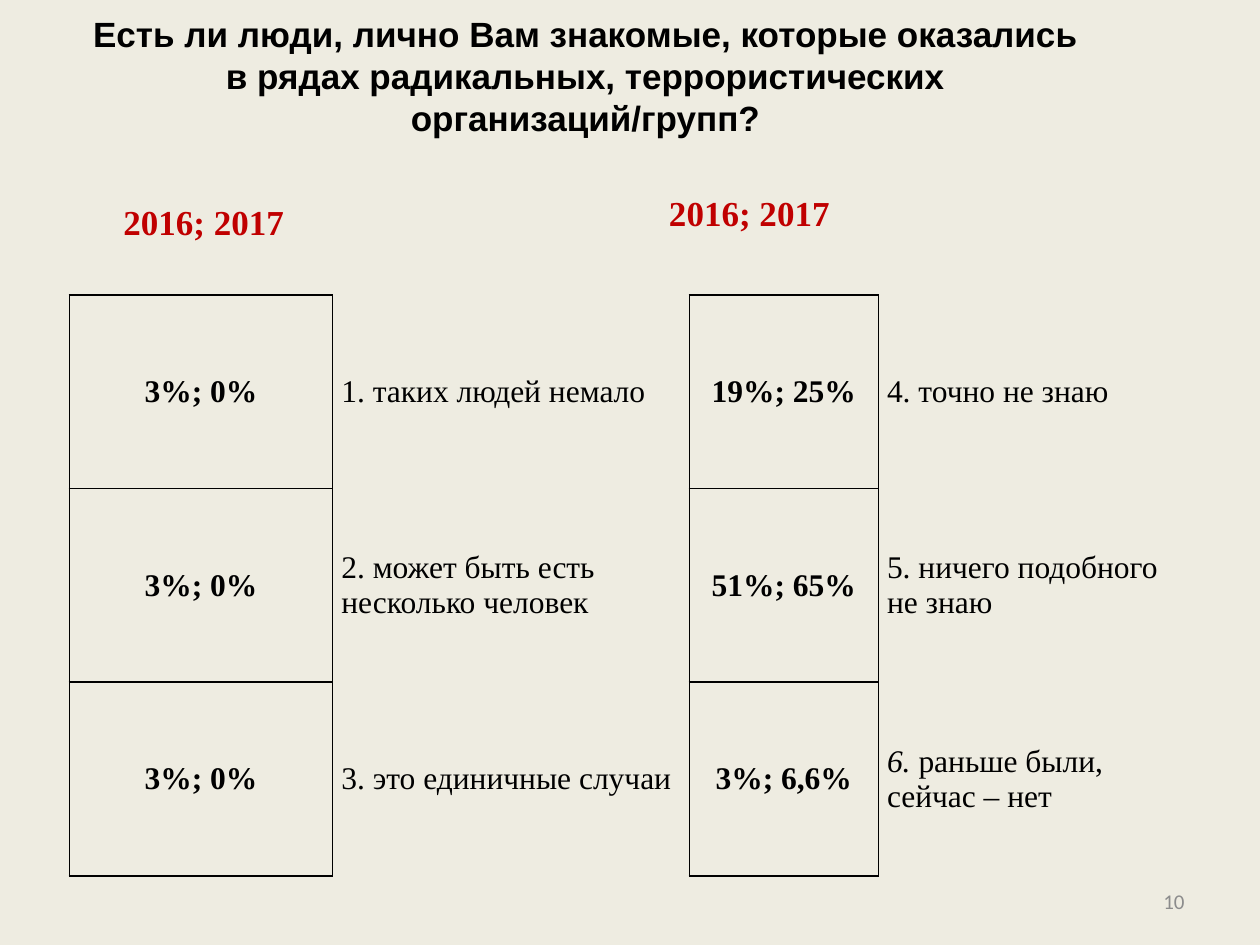
from dataclasses import dataclass
from typing import Any

from lxml.etree import SubElement
from pptx import Presentation
from pptx.dml.color import RGBColor
from pptx.enum.text import MSO_ANCHOR as Anchor, PP_ALIGN as Align
from pptx.oxml.ns import qn
from pptx.util import Pt

BLACK = RGBColor(0x00, 0x00, 0x00)
RED = RGBColor(0xC0, 0x00, 0x00)
GRAY = RGBColor(0x8C, 0x8C, 0x8C)
CREAM = RGBColor(0xEE, 0xEC, 0xE1)

SERIF = "Times New Roman"
PLAIN_STYLE = "{2D5ABB26-0587-4C30-8999-92F81FD0307C}"
CELL_FORMAT = {"margin_left": Pt(5), "margin_right": Pt(5), "margin_top": 0, "margin_bottom": 0}


@dataclass(frozen=True)
class Box:
    left: float
    top: float
    width: float
    height: float

    def lengths(self) -> tuple:
        return Pt(self.left), Pt(self.top), Pt(self.width), Pt(self.height)


@dataclass(frozen=True)
class Style:
    size: float
    align: Align
    color: RGBColor = BLACK
    face: str = SERIF
    bold: bool = False


@dataclass(frozen=True)
class Answer:
    share: str
    number: str
    wording: str
    italic_number: bool = False


TITLE = Style(20, Align.CENTER, face="Arial", bold=True)
YEARS = Style(20, Align.JUSTIFY, RED, bold=True)
SHARE = Style(18, Align.CENTER, bold=True)
WORDING = Style(18, Align.LEFT)
PAGE = Style(12, Align.RIGHT, GRAY, "Calibri")

ANSWERS = [
    [Answer("3%; 0%", "1. ", "таких людей немало"), Answer("19%; 25%", "4. ", "точно не знаю")],
    [Answer("3%; 0%", "2. ", "может быть есть несколько человек"),
     Answer("51%; 65%", "5. ", "ничего подобного не знаю")],
    [Answer("3%; 0%", "3. ", "это единичные случаи"),
     Answer("3%; 6,6%", "6. ", "раньше были, сейчас – нет", True)],
]


def apply(target: Any, values: dict) -> None:
    for name, value in values.items():
        setattr(target, name, value)


def write(frame: Any, style: Style, *parts: str, italic_first: bool = False) -> None:
    paragraph = frame.paragraphs[0]
    paragraph.alignment = style.align
    for index, part in enumerate(parts):
        run = paragraph.add_run()
        run.text = part
        italic = italic_first and index == 0
        apply(run.font, {"size": Pt(style.size), "name": style.face, "bold": style.bold, "italic": italic})
        run.font.color.rgb = style.color


def add_text(slide: Any, box: Box, style: Style, text: str) -> None:
    frame = slide.shapes.add_textbox(*box.lengths()).text_frame
    apply(frame, {"word_wrap": True, "vertical_anchor": Anchor.MIDDLE})
    write(frame, style, text)


def add_plain_table(slide: Any, box: Box, rows: int, widths: list[float]) -> Any:
    table = slide.shapes.add_table(rows, len(widths), *box.lengths()).table
    apply(table, {"first_row": False, "horz_banding": False})
    table._tbl.tblPr.find(qn("a:tableStyleId")).text = PLAIN_STYLE
    for column, width in zip(table.columns, widths):
        column.width = Pt(width)
    return table


def format_cell(cell: Any, anchor: Anchor, sides: str = "") -> None:
    apply(cell, CELL_FORMAT | {"vertical_anchor": anchor})
    properties = cell._tc.get_or_add_tcPr()
    for side in sides:
        line = SubElement(properties, qn(f"a:ln{side}"), w=str(Pt(1)))
        fill = SubElement(line, qn("a:solidFill"))
        SubElement(fill, qn("a:srgbClr"), val=str(BLACK))
    cell.fill.background()


def add_years(slide: Any, left: float, top: float) -> None:
    cell = add_plain_table(slide, Box(left, top, 126.7, 29.5), 1, [126.7]).cell(0, 0)
    format_cell(cell, Anchor.TOP)
    write(cell.text_frame, YEARS, "2016; 2017")


def add_answers(slide: Any) -> None:
    widths = [150.5, 203.8, 108, 182.1]
    table = add_plain_table(slide, Box(39.6, 168.5, sum(widths), 332), len(ANSWERS), widths)
    for row, answers in enumerate(ANSWERS):
        for pair, answer in enumerate(answers):
            share, wording = table.cell(row, 2 * pair), table.cell(row, 2 * pair + 1)
            format_cell(share, Anchor.MIDDLE, "LRTB")
            write(share.text_frame, SHARE, answer.share)
            format_cell(wording, Anchor.MIDDLE, "L" if pair else "LR")
            write(wording.text_frame, WORDING, answer.number, answer.wording,
                  italic_first=answer.italic_number)


def main() -> None:
    """Build the survey slide on acquaintances in radical groups."""
    deck = Presentation()
    apply(deck, {"slide_width": Pt(720), "slide_height": Pt(540)})
    slide = deck.slides.add_slide(deck.slide_layouts[6])
    slide.background.fill.solid()
    slide.background.fill.fore_color.rgb = CREAM

    add_text(slide, Box(516, 500.5, 168, 28.8), PAGE, "10")
    add_answers(slide)
    add_text(slide, Box(39.6, 3, 590, 80), TITLE,
             "Есть ли люди, лично Вам знакомые, которые оказались в рядах "
             "радикальных, террористических организаций/групп?")
    add_years(slide, 65.5, 116.6)
    add_years(slide, 377.3, 111.6)
    deck.save("out.pptx")


if __name__ == "__main__":
    main()
